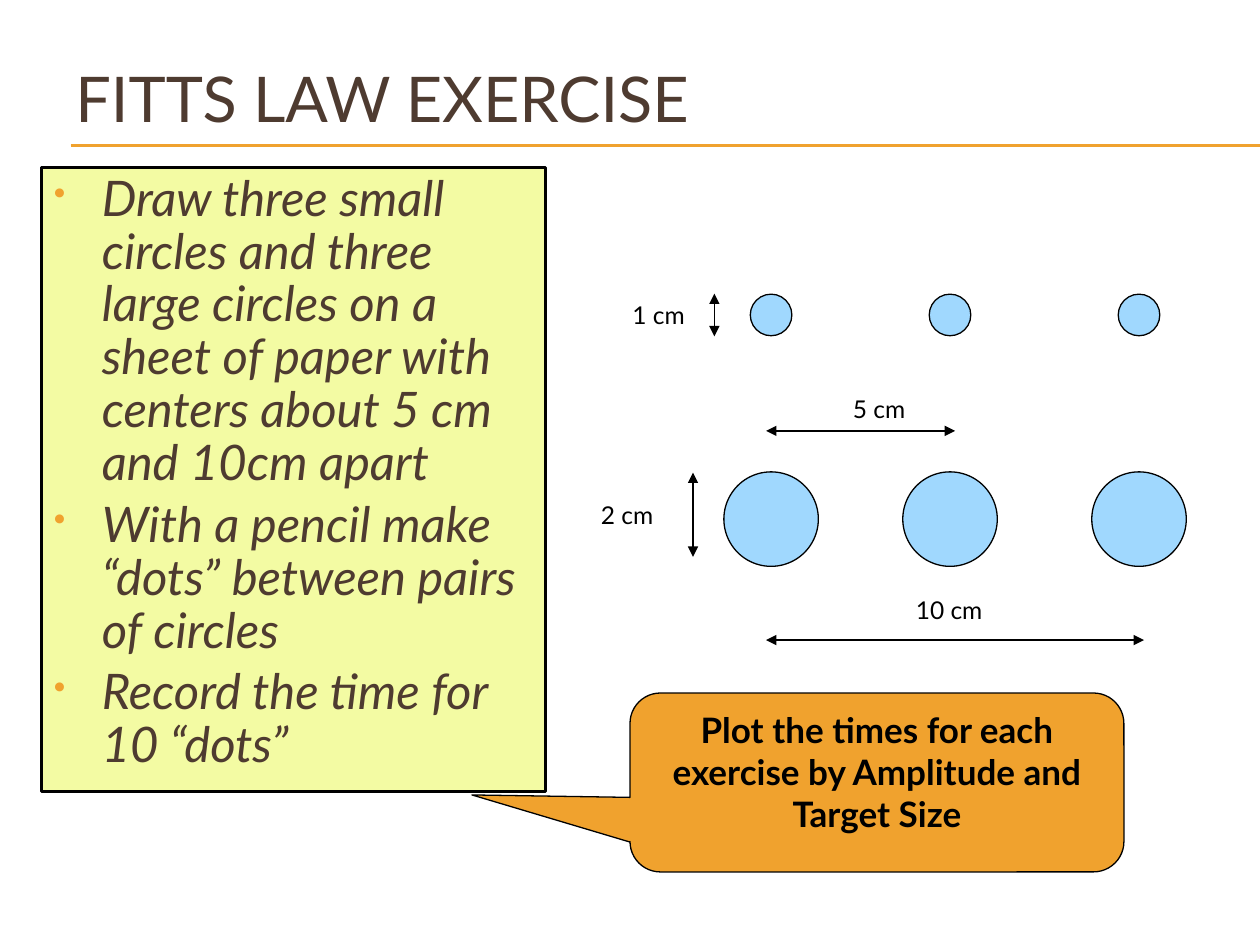
from lxml.etree import SubElement
from pptx import Presentation
from pptx.dml.color import RGBColor
from pptx.enum.shapes import MSO_CONNECTOR, MSO_SHAPE
from pptx.enum.text import MSO_ANCHOR, PP_ALIGN
from pptx.oxml.ns import qn
from pptx.util import Inches, Pt

BLACK, BROWN, GOLD = "000000", "4E3B30", "F0A22E"
LIME, BLUE = "F3FBA3", "A0D8FE"

deck = Presentation()
deck.slide_width, deck.slide_height = Inches(10), Inches(7.5)
slide = deck.slides.add_slide(deck.slide_layouts[6])
shapes = slide.shapes
color = RGBColor.from_string


def add_box(kind, box, fill=None, lines=(), size=14, ink=BLACK, width=0.75):
    """Add a filled shape, or a plain text box when kind is None."""
    box = [Inches(n) for n in box]
    if kind is None:
        shape = shapes.add_textbox(*box)
    else:
        shape = shapes.add_shape(kind, *box)
        shape.shadow.inherit = False
        shape.fill.solid()
        shape.fill.fore_color.rgb = color(fill)
        shape.line.color.rgb = color(BLACK)
        shape.line.width = Pt(width)
    frame = shape.text_frame
    frame.word_wrap = True
    frame.vertical_anchor = MSO_ANCHOR.TOP
    for i, line in enumerate(lines):
        para = frame.add_paragraph() if i else frame.paragraphs[0]
        para.text = line
        para.alignment = PP_ALIGN.LEFT
        para.font.name = "Lato"
        para.font.size = Pt(size)
        para.font.color.rgb = color(ink)
    return shape


def add_line(x1, y1, x2, y2, ink=BLACK, heads=True):
    ends = [Inches(n) for n in (x1, y1, x2, y2)]
    line = shapes.add_connector(MSO_CONNECTOR.STRAIGHT, *ends)
    line.line.color.rgb = color(ink)
    line.line.width = Pt(0.75)
    if heads:
        for tag in ("a:headEnd", "a:tailEnd"):
            SubElement(line.line._get_or_add_ln(), qn(tag), type="triangle")
    SubElement(line._element.spPr, qn("a:effectLst"))


# Title and double rule
for y in (1.15, 1.16):
    add_line(0.56, y, 10, y, GOLD, False)
title = add_box(None, (0.5, 0.3, 9, 0.95), lines=["FITTS LAW EXERCISE"],
                size=36, ink=BROWN)
title.text_frame.vertical_anchor = MSO_ANCHOR.MIDDLE

# Instructions
steps = [
    "Draw three small circles and three large circles on a sheet of paper "
    "with centers about 5 cm and 10cm apart",
    "With a pencil make “dots” between pairs of circles",
    "Record the time for 10 “dots”",
]
panel = add_box(MSO_SHAPE.RECTANGLE, (0.33, 1.33, 4, 4.95), LIME, steps,
                28, BROWN, 1.5)
for i, para in enumerate(panel.text_frame.paragraphs):
    para.font.italic = True
    para.line_spacing = 0.9
    para.space_before = Pt(5 if i else 0)
    props = para._p.get_or_add_pPr()
    props.set("marL", str(Inches(0.38)))
    props.set("indent", str(Inches(-0.38)))
    tint = SubElement(props, qn("a:buClr"))
    SubElement(tint, qn("a:srgbClr"), val=GOLD)
    SubElement(props, qn("a:buSzPct"), val="70000")
    SubElement(props, qn("a:buChar"), char="•")
    # Bullet settings must come before the default run properties
    props.append(props.find(qn("a:defRPr")))

# Rows of small and large circles on shared centers
for size, mid in ((0.33, 2.5), (0.75, 4.12)):
    for x in (6.12, 7.54, 9.04):
        add_box(MSO_SHAPE.OVAL, (x - size / 2, mid - size / 2, size, size), BLUE)

# Dimension arrows
for ends in ((6.08, 3.42, 7.58, 3.42), (6.08, 5.08, 9.08, 5.08),
             (5.67, 2.33, 5.67, 2.67), (5.5, 3.75, 5.5, 4.42)):
    add_line(*ends)

# Dimension labels
for text, x, y in (("5 cm", 6.67, 3.08), ("10 cm", 7.17, 4.67),
                   ("2 cm", 4.67, 3.92), ("1 cm", 4.92, 2.33)):
    add_box(None, (x, y, 0.75, 0.33), lines=[text])

# Callout
note = add_box(MSO_SHAPE.ROUNDED_RECTANGULAR_CALLOUT, (5, 5.5, 3.92, 1.42), GOLD,
               ["Plot the times for each exercise by Amplitude and Target Size"],
               20)
for i, value in enumerate((-0.82, 0.07, 0.17)):
    note.adjustments[i] = value
para = note.text_frame.paragraphs[0]
para.alignment = PP_ALIGN.CENTER
para.font.bold = True

deck.save("out.pptx")
